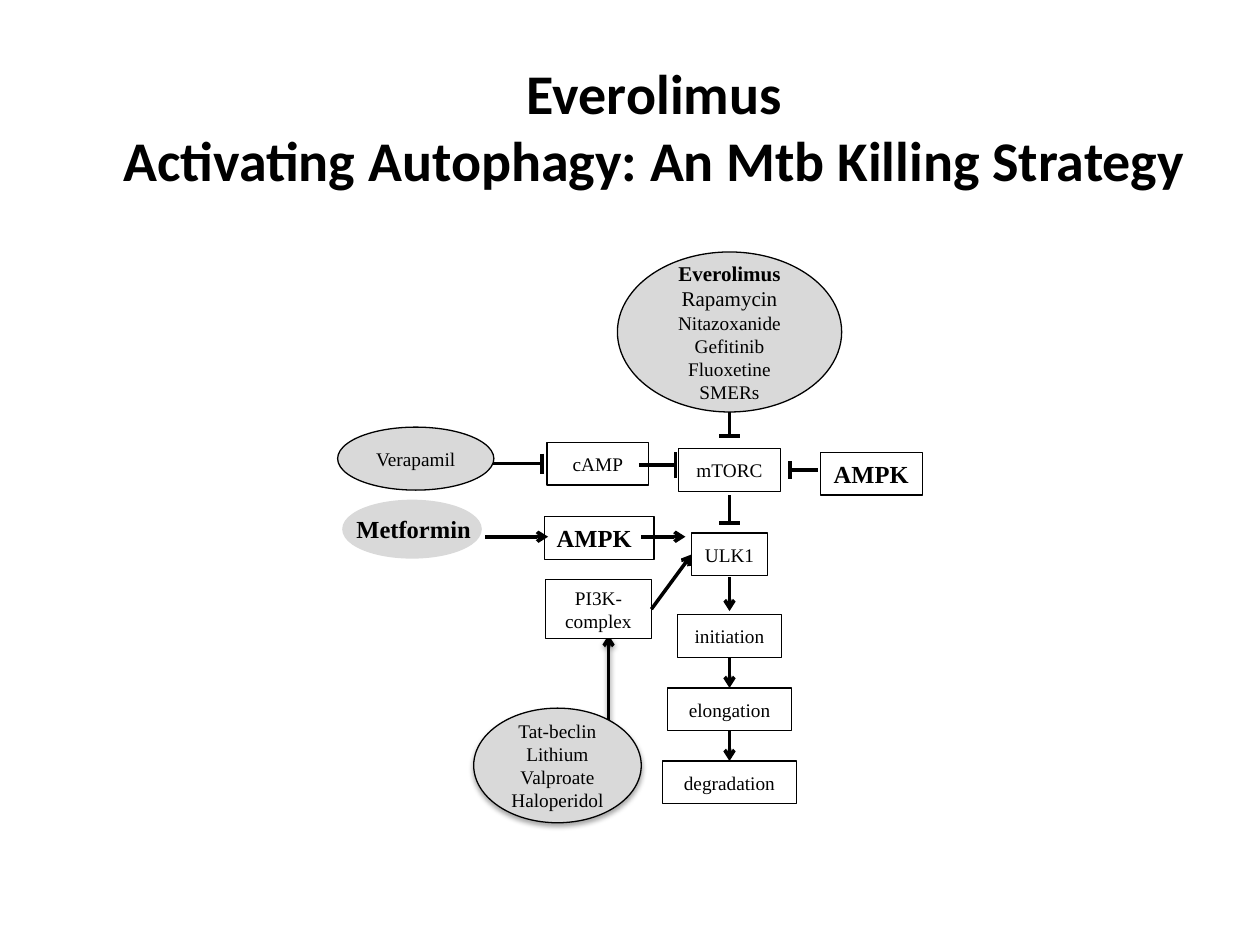
from lxml import etree
from pptx import Presentation, util as u
from pptx.dml.color import RGBColor
from pptx.enum import shapes, text
from pptx.oxml import ns

BLACK = RGBColor(0x00, 0x00, 0x00)
WHITE = RGBColor(0xFF, 0xFF, 0xFF)
GREY = RGBColor(0xD9, 0xD9, 0xD9)

SMALL = {"size": u.Pt(11), "bold": False}
MEDIUM = {"size": u.Pt(12), "bold": False}
MEDIUM_BOLD = {"size": u.Pt(12), "bold": True}
LARGE = {"size": u.Pt(14), "bold": True}
TITLE = {"size": u.Pt(32), "bold": True, "name": "Calibri"}

TOP, LEFT, BOTTOM, RIGHT = range(4)
BOX_HEIGHT = 0.34
AXIS = 5.79


class Diagram:
    font_name = "Times New Roman"
    outline = u.Pt(0.75)
    stroke = u.Pt(2)

    def __init__(self, slide):
        self.slide = slide

    def place(self, shape, left, top, width, height):
        bounds = {"left": left, "top": top, "width": width, "height": height}
        for name, value in bounds.items():
            setattr(shape, name, u.Inches(value))

    def fill_text(self, shape, lines, align=text.PP_ALIGN.CENTER,
                  anchor=text.MSO_ANCHOR.MIDDLE, margin=0.05):
        frame = shape.text_frame
        settings = {"word_wrap": True, "vertical_anchor": anchor,
                    "margin_left": u.Inches(margin), "margin_right": u.Inches(margin)}
        for name, value in settings.items():
            setattr(frame, name, value)
        for index, (words, style) in enumerate(lines):
            paragraph = frame.add_paragraph() if index else frame.paragraphs[0]
            paragraph.alignment = align
            run = paragraph.add_run()
            run.text = words
            for name, value in {"name": self.font_name, **style}.items():
                setattr(run.font, name, value)
            run.font.color.rgb = BLACK

    def title(self, lines, *bounds):
        shape = self.slide.shapes.title
        self.place(shape, *bounds)
        self.fill_text(shape, [(line, TITLE) for line in lines], margin=0.1)

    def node(self, kind, bounds, fill, lines=(), line=BLACK, weight=None, **layout):
        shape = self.slide.shapes.add_shape(kind, *map(u.Inches, bounds))
        shape.shadow.inherit = False
        if fill is None:
            shape.fill.background()
        else:
            shape.fill.solid()
            shape.fill.fore_color.rgb = fill
        shape.line.color.rgb = line
        shape.line.width = weight or self.outline
        self.fill_text(shape, lines, **layout)
        return shape

    def box(self, words, left, top, width, height=BOX_HEIGHT, style=SMALL,
            fill=WHITE, **layout):
        return self.node(shapes.MSO_SHAPE.RECTANGLE, (left, top, width, height),
                         fill, [(words, style)], **layout)

    def oval(self, lines, *bounds, **look):
        return self.node(shapes.MSO_SHAPE.OVAL, bounds, GREY, lines, **look)

    def label(self, words, *bounds):
        shape = self.slide.shapes.add_textbox(*map(u.Inches, bounds))
        self.fill_text(shape, [(words, LARGE)], text.PP_ALIGN.LEFT,
                       text.MSO_ANCHOR.TOP, 0.1)

    def line(self, start, end, arrow=False):
        connector = self.slide.shapes.add_connector(
            shapes.MSO_CONNECTOR.STRAIGHT, *map(u.Inches, (*start, *end)))
        connector.line.color.rgb = BLACK
        connector.line.width = self.stroke
        properties = connector._element.spPr
        etree.SubElement(properties, ns.qn("a:effectLst"))
        if arrow:
            outline = properties.find(ns.qn("a:ln"))
            etree.SubElement(outline, ns.qn("a:tailEnd"), type="arrow")
        return connector

    def join(self, source, source_side, target, target_side):
        connector = self.line((0, 0), (0, 0), arrow=True)
        connector.begin_connect(source, source_side)
        connector.end_connect(target, target_side)

    def inhibit(self, start, end, half_bar=0.08):
        self.line(start, end)
        x, y = end
        if start[0] == x:
            self.line((x - half_bar, y), (x + half_bar, y))
        else:
            self.line((x, y - half_bar), (x, y + half_bar))

    def shade(self, shape, opacity, distance):
        effects = shape._element.spPr.find(ns.qn("a:effectLst"))
        shadow = etree.SubElement(
            effects, ns.qn("a:outerShdw"), blurRad=str(u.Pt(3.1)),
            dist=str(u.Pt(distance)), dir="5400000", rotWithShape="0")
        color = etree.SubElement(shadow, ns.qn("a:srgbClr"), val=str(BLACK))
        etree.SubElement(color, ns.qn("a:alpha"), val=str(opacity * 1000))


def main():
    presentation = Presentation()
    presentation.slide_width = u.Inches(10)
    presentation.slide_height = u.Inches(7.5)
    slide = presentation.slides.add_slide(presentation.slide_layouts[5])
    diagram = Diagram(slide)

    diagram.title(["Everolimus", "Activating Autophagy: An Mtb Killing Strategy"],
                  0.78, 0.41, 8.83, 1.18)

    pathway = {
        words: diagram.box(words, AXIS - width / 2, top, width)
        for words, top, width in [
            ("degradation", 6.04, 1.06), ("elongation", 5.46, 0.98),
            ("initiation", 4.88, 0.83), ("ULK1", 4.23, 0.6), ("mTORC", 3.56, 0.81)]
    }
    inhibitors = ["Nitazoxanide", "Gefitinib", "Fluoxetine", "SMERs"]
    diagram.oval([("Everolimus", MEDIUM_BOLD), ("Rapamycin", MEDIUM)]
                 + [(drug, SMALL) for drug in inhibitors], 4.9, 2, 1.78, 1.27)
    diagram.inhibit((AXIS, 3.27), (AXIS, 3.46))
    diagram.inhibit((AXIS, 3.93), (AXIS, 4.15))

    diagram.box("AMPK", 6.51, 3.59, 0.81, style=LARGE)
    diagram.inhibit((6.49, 3.73), (6.27, 3.73), 0.07)

    diagram.line((AXIS, 4.58), (AXIS, 4.85), arrow=True)
    for source, target in [("initiation", "elongation"), ("elongation", "degradation")]:
        diagram.join(pathway[source], BOTTOM, pathway[target], TOP)

    activation = diagram.line((4.83, 5.83), (4.83, 5.04), arrow=True)
    diagram.shade(activation, 38, 1.6)
    activators = diagram.oval(
        [(drug, SMALL) for drug in ("Tat-beclin", "Lithium", "Valproate", "Haloperidol")],
        3.76, 5.62, 1.33, 0.91)
    diagram.shade(activators, 35, 1.8)
    kinase = diagram.box("PI3K-complex", 4.33, 4.6, 0.84, 0.47)
    diagram.join(kinase, RIGHT, pathway["ULK1"], LEFT)

    diagram.oval([("Verapamil", SMALL)], 2.68, 3.39, 1.24, 0.5)
    diagram.box("cAMP", 4.34, 3.51, 0.81)
    diagram.inhibit((3.91, 3.68), (4.3, 3.68))

    diagram.oval([], 2.73, 3.98, 1.08, 0.44, line=GREY, weight=diagram.stroke)
    diagram.label("Metformin", 2.73, 4.03, 1.38, 0.34)
    diagram.box("AMPK", 4.32, 4.1, 0.87, style=LARGE, fill=None, margin=0.1,
                align=text.PP_ALIGN.LEFT, anchor=text.MSO_ANCHOR.TOP)
    diagram.inhibit((5.07, 3.69), (5.36, 3.69), 0.1)
    for start, end in [(3.85, 4.35), (5.09, 5.44)]:
        diagram.line((start, 4.26), (end, 4.26), arrow=True)

    presentation.save("out.pptx")


if __name__ == "__main__":
    main()
